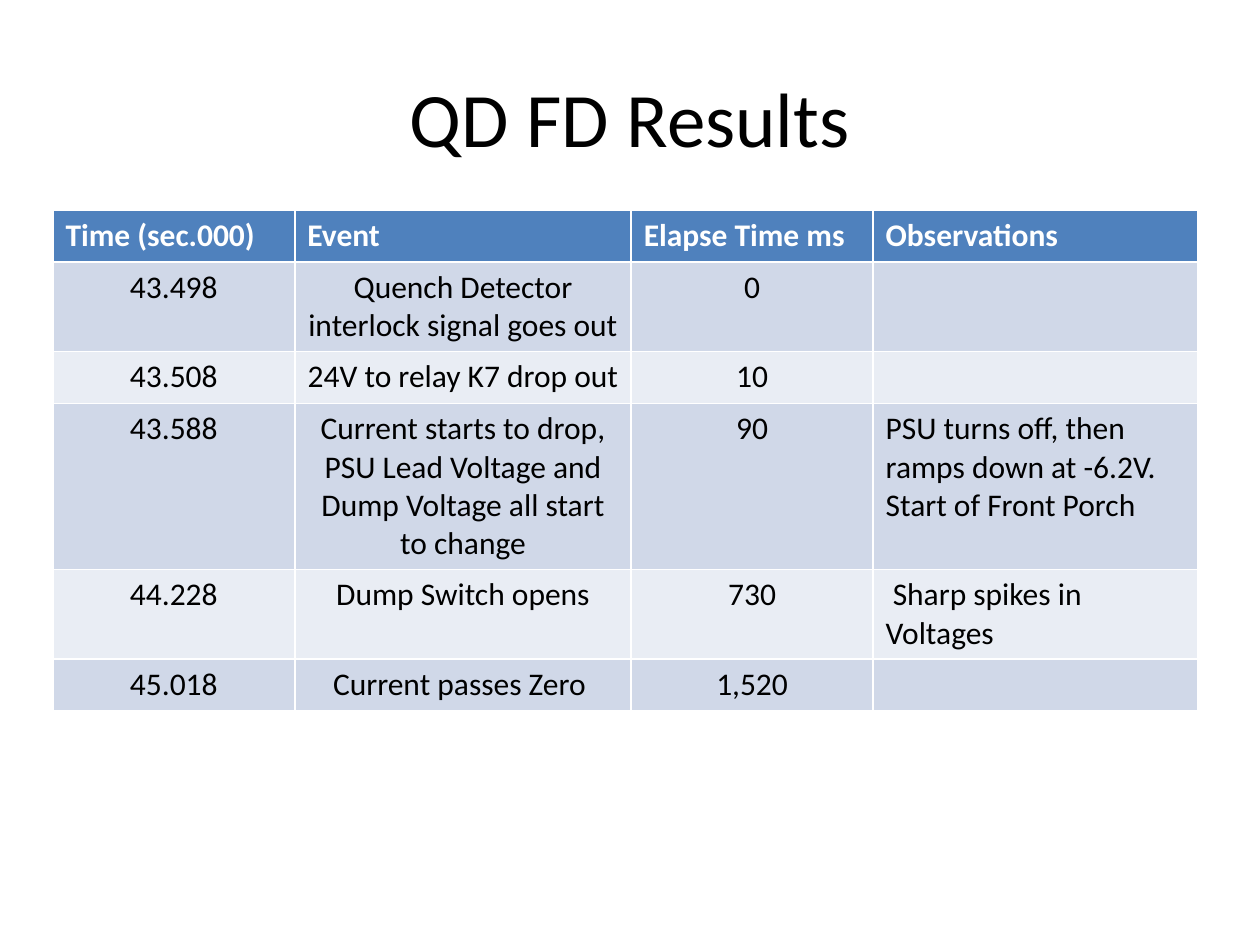
from pptx import Presentation
from pptx.dml.color import RGBColor
from pptx.enum.text import MSO_ANCHOR, PP_ALIGN
from pptx.util import Inches, Pt

COLORS = {
    "header": "4F81BD",
    "odd row": "D0D8E8",
    "even row": "E9EDF4",
    "header text": "FFFFFF",
    "text": "000000",
}
FONT = "Calibri"
COLUMN_WIDTHS = [1.92, 2.67, 1.92, 2.58]
ROW_HEIGHT = 0.41
ROWS = [
    ["Time (sec.000)", "Event", "Elapse Time ms", "Observations"],
    ["43.498", "Quench Detector interlock signal goes out", "0", ""],
    ["43.508", "24V to relay K7 drop out", "10", ""],
    ["43.588", "Current starts to drop, PSU Lead Voltage and Dump Voltage all start to change",
     "90", "PSU turns off, then ramps down at -6.2V.\nStart of Front Porch"],
    ["44.228", "Dump Switch opens", "730", " Sharp spikes in Voltages"],
    ["45.018", "Current passes Zero ", "1,520", ""],
]


def format_paragraph(paragraph, size, color, alignment, bold=False):
    paragraph.alignment = alignment
    paragraph.font.name = FONT
    paragraph.font.size = Pt(size)
    paragraph.font.bold = bold
    paragraph.font.color.rgb = RGBColor.from_string(COLORS[color])


presentation = Presentation()
presentation.slide_width = Inches(10)
presentation.slide_height = Inches(7.5)
slide = presentation.slides.add_slide(presentation.slide_layouts[5])

# Title
title = slide.shapes.title
title.left, title.top = Inches(0.5), Inches(0.3)
title.width, title.height = Inches(9), Inches(1.25)
title.text_frame.text = "QD FD Results"
title.text_frame.vertical_anchor = MSO_ANCHOR.MIDDLE
format_paragraph(title.text_frame.paragraphs[0], 44, "text", PP_ALIGN.CENTER)

# Table of events; rows grow to fit their text
table = slide.shapes.add_table(
    len(ROWS), len(COLUMN_WIDTHS), Inches(0.42), Inches(1.67),
    Inches(sum(COLUMN_WIDTHS)), Inches(ROW_HEIGHT * len(ROWS))).table
for column, width in zip(table.columns, COLUMN_WIDTHS):
    column.width = Inches(width)

for row_index, row in enumerate(ROWS):
    table.rows[row_index].height = Inches(ROW_HEIGHT)
    is_header = row_index == 0
    if is_header:
        fill_color, text_color = "header", "header text"
    else:
        fill_color, text_color = ("odd row" if row_index % 2 else "even row"), "text"
    for column_index, text in enumerate(row):
        cell = table.cell(row_index, column_index)
        cell.text = text
        cell.fill.solid()
        cell.fill.fore_color.rgb = RGBColor.from_string(COLORS[fill_color])
        is_left = is_header or column_index == len(row) - 1
        alignment = PP_ALIGN.LEFT if is_left else PP_ALIGN.CENTER
        for paragraph in cell.text_frame.paragraphs:
            format_paragraph(paragraph, 18, text_color, alignment, bold=is_header)

presentation.save("out.pptx")
